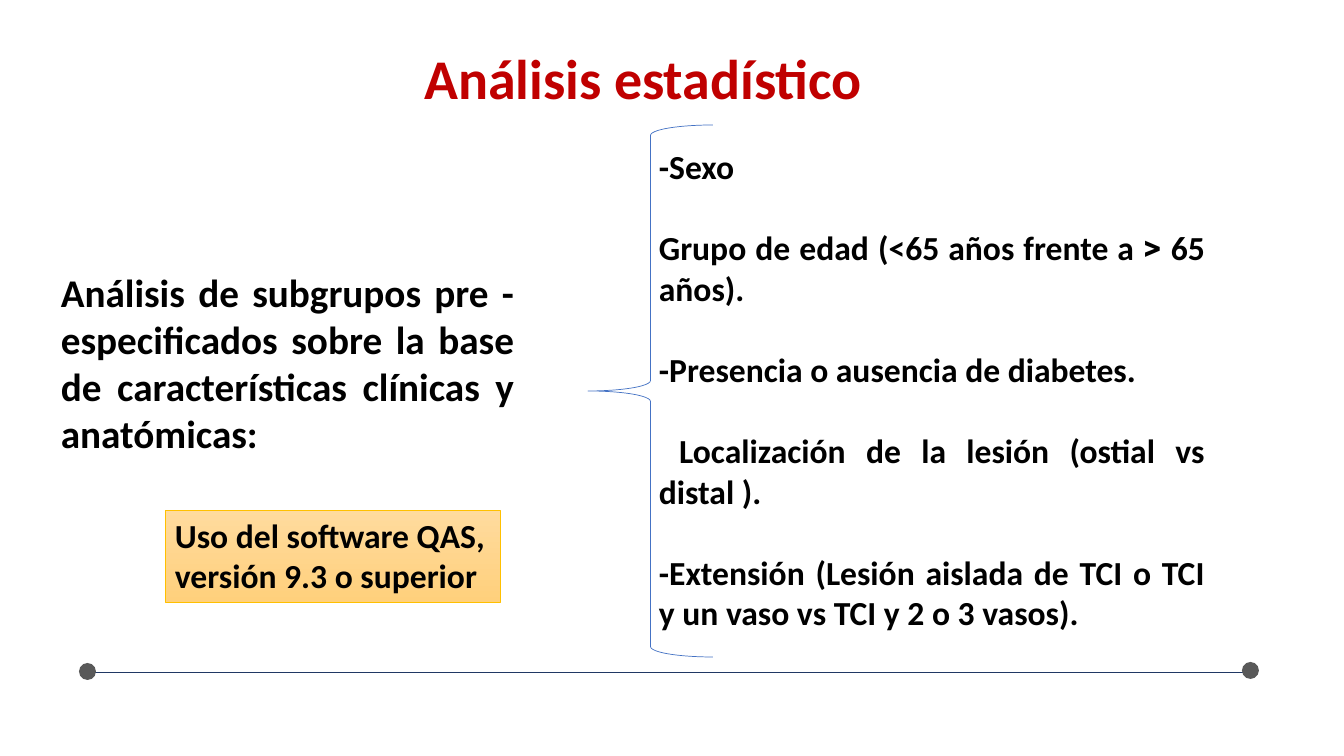
from dataclasses import dataclass

import pptx
import pptx.dml.color
import pptx.enum.shapes
import pptx.enum.text
import pptx.oxml.ns
import pptx.util
from lxml import etree

ALIGN = pptx.enum.text.PP_ALIGN
ANCHOR = pptx.enum.text.MSO_ANCHOR
SHAPE = pptx.enum.shapes.MSO_SHAPE
EMU_PER_PX = 914400 / 100.8


@dataclass(frozen=True)
class Theme:
    font: str = "Calibri"
    symbol_font: str = "League Spartan"
    title_size: int = 40
    lead_size: int = 28
    body_size: int = 24
    list_gap: float = 29.3
    hairline: float = 0.5
    title: str = "C00000"
    text: str = "000000"
    rule: str = "203864"
    dot: str = "595959"
    brace: str = "4472C4"
    note_top: str = "FFDB9E"
    note_bottom: str = "FFD07C"
    note_line: str = "FFC000"


def px(value):
    return pptx.util.Emu(round(value * EMU_PER_PX))


def rgb(value):
    return pptx.dml.color.RGBColor.from_string(value)


class SlideBuilder:
    def __init__(self, presentation, theme):
        self.theme = theme
        self.slide = presentation.slides.add_slide(presentation.slide_layouts[5])

    def fill_text(self, frame, paragraphs, size, color, align, gap=0):
        """Each paragraph is a list of (text, font) runs, or a plain string."""
        frame.word_wrap = True
        for index, content in enumerate(paragraphs):
            paragraph = frame.paragraphs[0] if index == 0 else frame.add_paragraph()
            paragraph.alignment = align
            if index and gap:
                paragraph.space_before = pptx.util.Pt(gap)
            paragraph.font.name = self.theme.font
            paragraph.font.size = pptx.util.Pt(size)
            paragraph.font.bold = True
            paragraph.font.color.rgb = rgb(color)
            runs = [(content, None)] if isinstance(content, str) else content
            for text, font in runs:
                run = paragraph.add_run()
                run.text = text
                if font:
                    run.font.name = font

    def title(self, text, left, top, width, height):
        shape = self.slide.shapes.title
        shape.left, shape.top, shape.width, shape.height = map(px, (left, top, width, height))
        frame = shape.text_frame
        frame.vertical_anchor = ANCHOR.MIDDLE
        self.fill_text(frame, [text], self.theme.title_size, self.theme.title, ALIGN.CENTER)
        frame.paragraphs[0].line_spacing = 0.9

    def text(self, paragraphs, left, top, width, height, size, gap=0):
        box = self.slide.shapes.add_textbox(*map(px, (left, top, width, height)))
        self.fill_text(box.text_frame, paragraphs, size, self.theme.text, ALIGN.JUSTIFY, gap)

    def shape(self, kind, left, top, width, height, fill=None, line=None):
        shape = self.slide.shapes.add_shape(kind, *map(px, (left, top, width, height)))
        shape.shadow.inherit = False
        if fill:
            shape.fill.solid()
            shape.fill.fore_color.rgb = rgb(fill)
        else:
            shape.fill.background()
        if line:
            shape.line.color.rgb = rgb(line)
            shape.line.width = pptx.util.Pt(self.theme.hairline)
        else:
            shape.line.fill.background()
        return shape

    def note(self, paragraphs, left, top, width, height):
        shape = self.shape(SHAPE.RECTANGLE, left, top, width, height, line=self.theme.note_line)
        shape.fill.gradient()
        shape.fill.gradient_angle = 270
        colors = (self.theme.note_top, self.theme.note_bottom)
        for stop, color in zip(shape.fill.gradient_stops, colors):
            stop.color.rgb = rgb(color)
        shape.text_frame.vertical_anchor = ANCHOR.TOP
        self.fill_text(shape.text_frame, paragraphs, self.theme.body_size,
                       self.theme.text, ALIGN.LEFT)

    def rule(self, left, right, y):
        line = self.slide.shapes.add_connector(
            pptx.enum.shapes.MSO_CONNECTOR.STRAIGHT, px(left), px(y), px(right), px(y))
        line.line.color.rgb = rgb(self.theme.rule)
        line.line.width = pptx.util.Pt(self.theme.hairline)
        etree.SubElement(line._element.spPr, pptx.oxml.ns.qn("a:effectLst"))


def main():
    presentation = pptx.Presentation()
    presentation.slide_width, presentation.slide_height = px(1344), px(756)
    theme = Theme()
    builder = SlideBuilder(presentation, theme)

    # Footer rule with a dot at each end
    builder.rule(91, 1248, 672)
    for left, top in ((1242, 662), (79, 663)):
        builder.shape(SHAPE.OVAL, left, top, 17, 17, fill=theme.dot)

    # Title and lead statement
    builder.title("Análisis estadístico ", 70, 28, 1159, 107)
    builder.text(
        ["Análisis de subgrupos pre - especificados sobre la base de "
         "características clínicas y anatómicas:"],
        51, 263, 473, 201, theme.lead_size)

    # Brace and subgroup list
    builder.shape(SHAPE.LEFT_BRACE, 588, 125, 125, 532, line=theme.brace)
    subgroups = [
        "-Sexo",
        [("Grupo de edad (<65 años frente a ", None), (">", theme.symbol_font),
         (" 65 años).", None)],
        "-Presencia o ausencia de diabetes.",
        " Localización de la lesión (ostial vs distal ).",
        "-Extensión (Lesión aislada de TCI o TCI y un vaso vs TCI y 2 o 3 vasos).",
    ]
    builder.text(subgroups, 649, 141, 566, 499, theme.body_size, theme.list_gap)

    # Software note
    builder.note(["Uso del software QAS,", "versión 9.3 o superior"], 165, 510, 335, 92)

    presentation.save("out.pptx")


if __name__ == "__main__":
    main()
